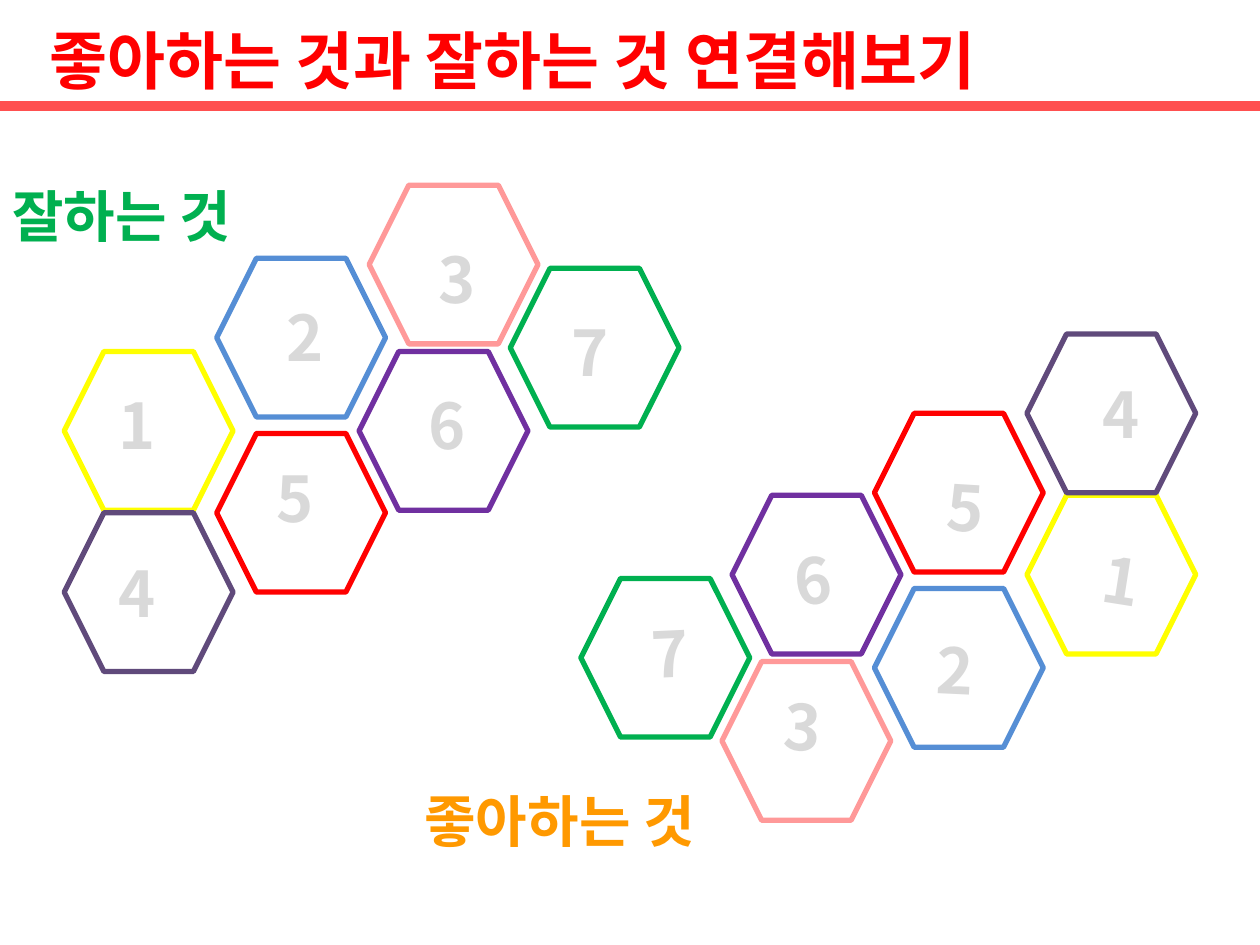
"""Build a slide pairing seven numbered strengths with seven numbered likes in hexagons."""
from lxml import etree
from pptx import Presentation
from pptx.dml.color import RGBColor
from pptx.enum import shapes, text
from pptx.oxml import ns
from pptx.util import Inches, Pt

FONT = "Noto Sans CJK KR"
RED = RGBColor(0xFF, 0x00, 0x00)
CORAL = RGBColor(0xFF, 0x50, 0x50)
YELLOW = RGBColor(0xFF, 0xFF, 0x00)
PLUM = RGBColor(0x60, 0x4A, 0x7B)
BLUE = RGBColor(0x55, 0x8E, 0xD5)
PINK = RGBColor(0xFF, 0x99, 0x99)
PURPLE = RGBColor(0x70, 0x30, 0xA0)
GREEN = RGBColor(0x00, 0xB0, 0x50)
ORANGE = RGBColor(0xFF, 0x99, 0x00)
GREY = RGBColor(0xD9, 0xD9, 0xD9)
WHITE = RGBColor(0xFF, 0xFF, 0xFF)


def write(frame, wording, size, color, align):
    paragraph = frame.paragraphs[0]
    paragraph.alignment = align
    run = paragraph.add_run()
    run.text = wording
    run.font.size = Pt(size)
    run.font.bold = True
    run.font.name = FONT
    run.font.color.rgb = color
    etree.SubElement(run.font._element, ns.qn("a:ea"), typeface=FONT)


prs = Presentation()
prs.slide_width, prs.slide_height = Inches(10), Inches(7.5)
slide = prs.slides.add_slide(prs.slide_layouts[5])

title = slide.shapes.title
title.left, title.top = Inches(0), Inches(-0.05)
title.width, title.height = Inches(10), Inches(1.04)
heading = title.text_frame
heading.margin_left = heading.margin_right = Inches(0.39)
heading.margin_top = heading.margin_bottom = Inches(0.2)
heading.vertical_anchor = text.MSO_ANCHOR.MIDDLE
heading.auto_size = text.MSO_AUTO_SIZE.SHAPE_TO_FIT_TEXT
write(heading, "좋아하는 것과 잘하는 것 연결해보기", 36, RED, text.PP_ALIGN.LEFT)

rule = slide.shapes.add_connector(
    shapes.MSO_CONNECTOR.STRAIGHT, Inches(0), Inches(0.84), Inches(10), Inches(0.84))
rule.line.color.rgb = CORAL
rule.line.width = Pt(6)
etree.SubElement(rule._element.spPr, ns.qn("a:effectLst"))

cells = [
    (0.51, 2.79, YELLOW), (0.51, 4.07, PLUM), (1.72, 3.44, RED), (1.72, 2.05, BLUE),
    (2.93, 1.47, PINK), (2.85, 2.79, PURPLE), (4.05, 2.13, GREEN),
]
strength_numbers = [
    (0.79, 3.12, 0), (2.12, 2.38, 0), (3.33, 1.96, 0), (0.79, 4.45, 0),
    (2.04, 3.7, 0), (3.25, 3.12, 0), (4.38, 2.54, 0),
]
like_numbers = [
    (8.6, 4.35, 9), (7.28, 5.02, 2.8), (6.07, 5.51, 4.1), (8.6, 3.03, 0),
    (7.36, 3.77, 3.6), (6.15, 4.35, 352.9), (5.02, 4.93, 357.4),
]
clusters = [
    ("잘하는 것", GREEN, 0, 1.39, 0, strength_numbers),
    ("좋아하는 것", ORANGE, 3.27, 6.19, 180, like_numbers),
]

for caption, caption_color, caption_left, caption_top, turn, numbers in clusters:
    cluster = slide.shapes.add_group_shape().shapes

    for left, top, color in cells:
        if turn:
            left, top = 8.66 - left, 6.72 - top
        cell = cluster.add_shape(
            shapes.MSO_SHAPE.HEXAGON, Inches(left), Inches(top), Inches(1.34), Inches(1.26))
        cell.rotation = turn
        cell.shadow.inherit = False
        cell.fill.background()
        cell.line.color.rgb = color
        cell.line.width = Pt(3)

    for number, (left, top, tilt) in enumerate(numbers, 1):
        height = 0.58 if number == 2 else 0.5
        tag = cluster.add_shape(
            shapes.MSO_SHAPE.RECTANGLE, Inches(left), Inches(top), Inches(0.6), Inches(height))
        tag.rotation = tilt
        tag.shadow.inherit = False
        tag.fill.solid()
        tag.fill.fore_color.rgb = WHITE
        tag.line.fill.background()
        tag.text_frame.vertical_anchor = text.MSO_ANCHOR.MIDDLE
        write(tag.text_frame, str(number), 36, GREY, text.PP_ALIGN.CENTER)

    label = cluster.add_textbox(
        Inches(caption_left), Inches(caption_top), Inches(2.48), Inches(0.64)).text_frame
    label.word_wrap = True
    label.auto_size = text.MSO_AUTO_SIZE.SHAPE_TO_FIT_TEXT
    write(label, caption, 32, caption_color, text.PP_ALIGN.LEFT)

prs.save("out.pptx")
